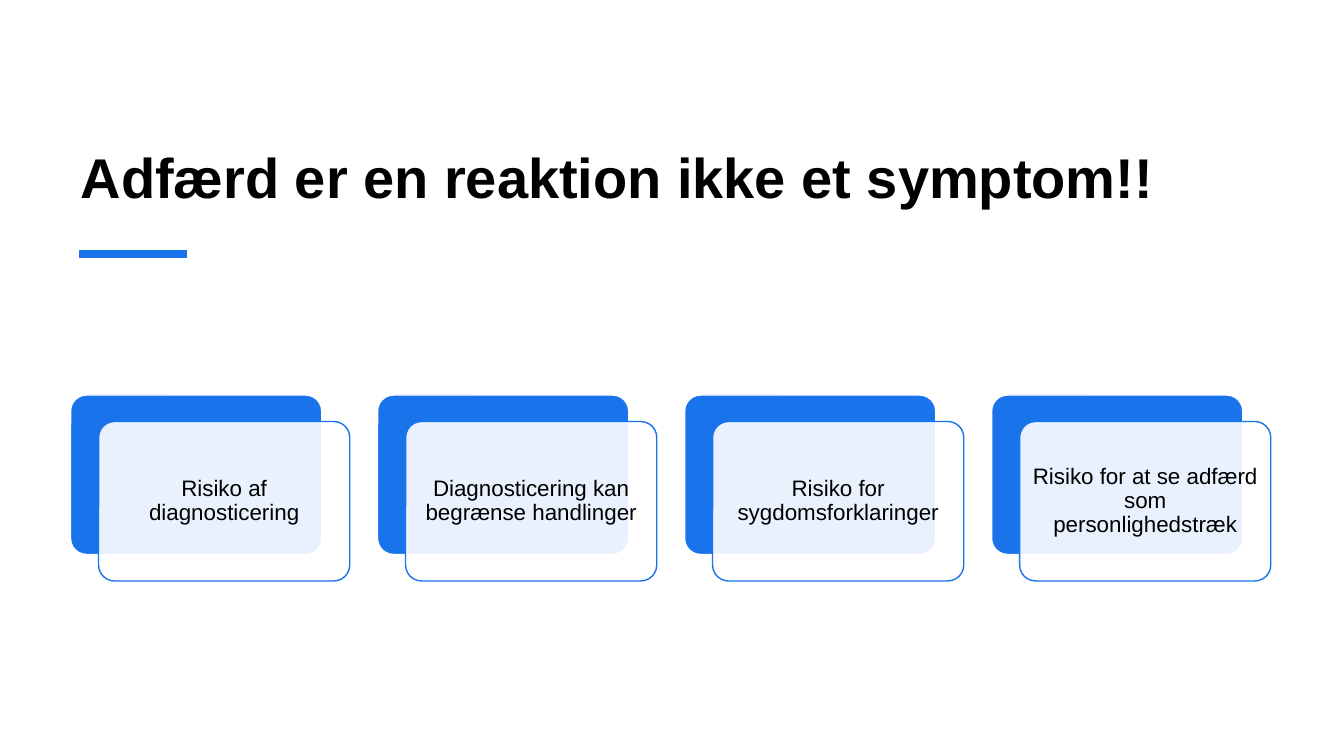
from pptx import Presentation
from pptx.dml.color import RGBColor
from pptx.enum.shapes import MSO_CONNECTOR, MSO_SHAPE
from pptx.enum.text import MSO_ANCHOR, MSO_AUTO_SIZE, PP_ALIGN
from pptx.oxml.ns import qn
from pptx.util import Pt
from lxml import etree

BLUE, WHITE, BLACK = "1973EB", "FFFFFF", "000000"
CARD_WIDTH, CARD_HEIGHT = 179.4, 113.9
CARD_LEFT, CARD_TOP, CARD_STEP = 50.4, 282.2, 219.3
OFFSET_X, OFFSET_Y = 20, 18.9


def paint(color_format, color):
    color_format.rgb = RGBColor.from_string(color)


def add_card(left, top, fill, line):
    card = page.shapes.add_shape(MSO_SHAPE.ROUNDED_RECTANGLE, Pt(left), Pt(top),
                                 Pt(CARD_WIDTH), Pt(CARD_HEIGHT))
    card.adjustments[0] = 0.1
    card.shadow.inherit = False
    card.fill.solid()
    paint(card.fill.fore_color, fill)
    paint(card.line.color, line)
    card.line.width = Pt(1)
    return card


deck = Presentation()
deck.slide_width, deck.slide_height = Pt(960), Pt(540)
page = deck.slides.add_slide(deck.slide_layouts[5])

# Title
title = page.shapes.title
title.left, title.top, title.width, title.height = Pt(50.4), Pt(44.6), Pt(857.5), Pt(109.4)
frame = title.text_frame
frame.text = "Adfærd er en reaktion ikke et symptom!!"
frame.word_wrap = True
frame.auto_size = MSO_AUTO_SIZE.NONE
frame.vertical_anchor = MSO_ANCHOR.BOTTOM
para = frame.paragraphs[0]
para.alignment = PP_ALIGN.LEFT
para.line_spacing = 0.9
font = para.runs[0].font
font.name, font.size, font.bold = "Arial", Pt(40), True
paint(font.color, BLACK)

# Accent line under the title
accent = page.shapes.add_connector(MSO_CONNECTOR.STRAIGHT, Pt(56.3), Pt(181.6), Pt(133.3), Pt(181.6))
paint(accent.line.color, BLUE)
accent.line.width = Pt(6)
etree.SubElement(accent._element.spPr, qn("a:effectLst"))

# Four risk cards: blue back, translucent front with the text
risks = [
    "Risiko af diagnosticering",
    "Diagnosticering kan begrænse handlinger",
    "Risiko for sygdomsforklaringer",
    "Risiko for at se adfærd som personlighedstræk",
]
for index, risk in enumerate(risks):
    left = CARD_LEFT + index * CARD_STEP
    add_card(left, CARD_TOP, BLUE, WHITE)
    front = add_card(left + OFFSET_X, CARD_TOP + OFFSET_Y, WHITE, BLUE)
    front_color = front._element.spPr.find(qn("a:solidFill"))[0]
    etree.SubElement(front_color, qn("a:alpha"), val="90000")

    frame = front.text_frame
    frame.text = risk
    frame.word_wrap = True
    frame.vertical_anchor = MSO_ANCHOR.MIDDLE
    frame.margin_left = frame.margin_right = frame.margin_top = frame.margin_bottom = Pt(5)
    para = frame.paragraphs[0]
    para.alignment = PP_ALIGN.CENTER
    para.line_spacing = 0.9
    font = para.runs[0].font
    font.name, font.size = "Arial", Pt(16)
    paint(font.color, BLACK)

deck.save("out.pptx")
